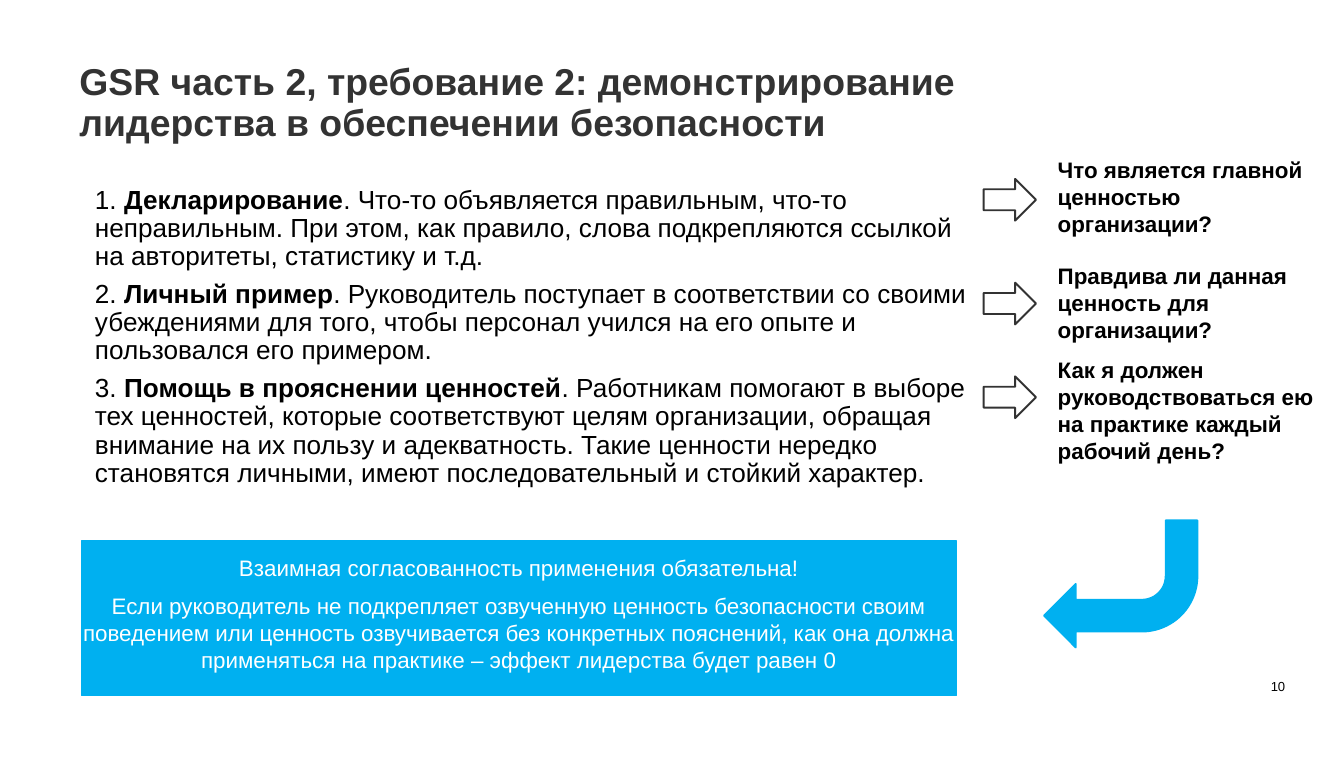
from dataclasses import dataclass

import pptx
import pptx.dml.color
import pptx.enum.shapes
import pptx.enum.text
import pptx.oxml.xmlchemy
from pptx.util import Cm, Pt

Rgb = pptx.dml.color.RGBColor
Kind = pptx.enum.shapes.MSO_SHAPE
Align = pptx.enum.text.PP_ALIGN
Anchor = pptx.enum.text.MSO_ANCHOR
Fit = pptx.enum.text.MSO_AUTO_SIZE


@dataclass(frozen=True)
class Theme:
    face: str = "Arial"
    ink: Rgb = Rgb(0, 0, 0)
    dark: Rgb = Rgb(0x33, 0x33, 0x33)
    blue: Rgb = Rgb(0, 0xB0, 0xF0)
    white: Rgb = Rgb(255, 255, 255)
    title: int = 20
    body: int = 14
    note: int = 12
    page: int = 7


THEME = Theme()

TITLE = "GSR часть 2, требование 2: демонстрирование лидерства в обеспечении безопасности"

METHODS = [
    ("Декларирование",
     "Что-то объявляется правильным, что-то неправильным. При этом, как правило, "
     "слова подкрепляются ссылкой на авторитеты, статистику и т.д."),
    ("Личный пример",
     "Руководитель поступает в соответствии со своими убеждениями для того, чтобы "
     "персонал учился на его опыте и пользовался его примером."),
    ("Помощь в прояснении ценностей",
     "Работникам помогают в выборе тех ценностей, которые соответствуют целям "
     "организации, обращая внимание на их пользу и адекватность. Такие ценности "
     "нередко становятся личными, имеют последовательный и стойкий характер."),
]

# Arrow top, text top, text height (cm), question
ASKS = [
    (3.38, 2.95, 1.55, "Что является главной ценностью организации?"),
    (5.34, 4.95, 1.55, "Правдива ли данная ценность для организации?"),
    (7.11, 6.73, 2.06,
     "Как я должен руководствоваться ею на практике каждый рабочий день?"),
]

RULE = [
    "Взаимная согласованность применения обязательна!",
    "Если руководитель не подкрепляет озвученную ценность безопасности своим "
    "поведением или ценность озвучивается без конкретных пояснений, как она должна "
    "применяться на практике – эффект лидерства будет равен 0",
]


def place(shape, left, top, width, height):
    shape.left, shape.top = Cm(left), Cm(top)
    shape.width, shape.height = Cm(width), Cm(height)


def set_frame(frame, anchor=Anchor.TOP, inset=0):
    frame.word_wrap = True
    frame.auto_size = Fit.NONE
    frame.vertical_anchor = anchor
    if inset is not None:
        frame.margin_left = frame.margin_right = Cm(inset)
        frame.margin_top = frame.margin_bottom = Cm(inset)


def style(para, size, color, bold=None, align=Align.LEFT):
    para.alignment = align
    font = para.font
    font.name, font.size, font.bold = THEME.face, Pt(size), bold
    font.color.rgb = color


def add_title(slide):
    shape = slide.shapes.title
    place(shape, 1.5, 1.2, 18.24, 0.91)
    set_frame(shape.text_frame)
    para = shape.text_frame.paragraphs[0]
    para.text = TITLE
    para.line_spacing = 0.9
    style(para, THEME.title, THEME.dark, True)


def add_list(slide):
    shape = slide.placeholders[1]
    place(shape, 1.54, 3.4, 17.07, 8)
    frame = shape.text_frame
    set_frame(frame, inset=None)
    for num, (name, text) in enumerate(METHODS, 1):
        para = frame.paragraphs[0] if num == 1 else frame.add_paragraph()
        props = para._p.get_or_add_pPr()
        props.set("marL", "0")
        props.set("indent", "0")
        props.append(pptx.oxml.xmlchemy.OxmlElement("a:buNone"))
        para.line_spacing = 0.9
        para.space_before = Pt(0 if num == 1 else 5)
        style(para, THEME.body, THEME.ink)
        para.add_run().text = f"{num}. "
        head = para.add_run()
        head.text = name
        head.font.bold = True
        para.add_run().text = f". {text}"


def add_block(slide, kind, box, fill, line, weight):
    shape = slide.shapes.add_shape(kind, *map(Cm, box))
    shape.shadow.inherit = False
    shape.fill.solid()
    shape.fill.fore_color.rgb = fill
    shape.line.color.rgb = line
    shape.line.width = Pt(weight)
    return shape


def add_label(slide, box, text, size, bold=None, align=Align.LEFT, anchor=Anchor.TOP):
    frame = slide.shapes.add_textbox(*map(Cm, box)).text_frame
    set_frame(frame, anchor)
    para = frame.paragraphs[0]
    para.text = text
    style(para, size, THEME.ink, bold, align)


def add_rule(slide):
    shape = add_block(slide, Kind.RECTANGLE, (1.54, 10.22, 16.54, 2.92),
                      THEME.blue, THEME.blue, 0.75)
    frame = shape.text_frame
    set_frame(frame, Anchor.MIDDLE)
    frame.margin_bottom = Cm(0.42)
    frame.text = "\n".join(RULE)
    for para in frame.paragraphs:
        para.space_after = Pt(6)
        style(para, THEME.note, THEME.white, align=Align.CENTER)
    frame.paragraphs[0].line_spacing = 1.5


def main():
    deck = pptx.Presentation()
    deck.slide_width, deck.slide_height = Cm(25.4), Cm(14.3)
    slide = deck.slides.add_slide(deck.slide_layouts[1])
    add_title(slide)
    add_list(slide)
    bend = add_block(slide, Kind.BENT_ARROW, (19.73, 9.83, 2.9, 2.4),
                     THEME.blue, THEME.blue, 1)
    bend.rotation = 180
    add_rule(slide)
    for mark, top, height, text in ASKS:
        add_block(slide, Kind.RIGHT_ARROW, (18.59, mark, 0.99, 0.79),
                  THEME.white, THEME.dark, 1)
        add_label(slide, (19.99, top, 5, height), text, THEME.note, True)
    add_label(slide, (22.74, 12.73, 1.55, 0.38), "10", THEME.page,
              align=Align.RIGHT, anchor=Anchor.BOTTOM)
    deck.save("out.pptx")


if __name__ == "__main__":
    main()
